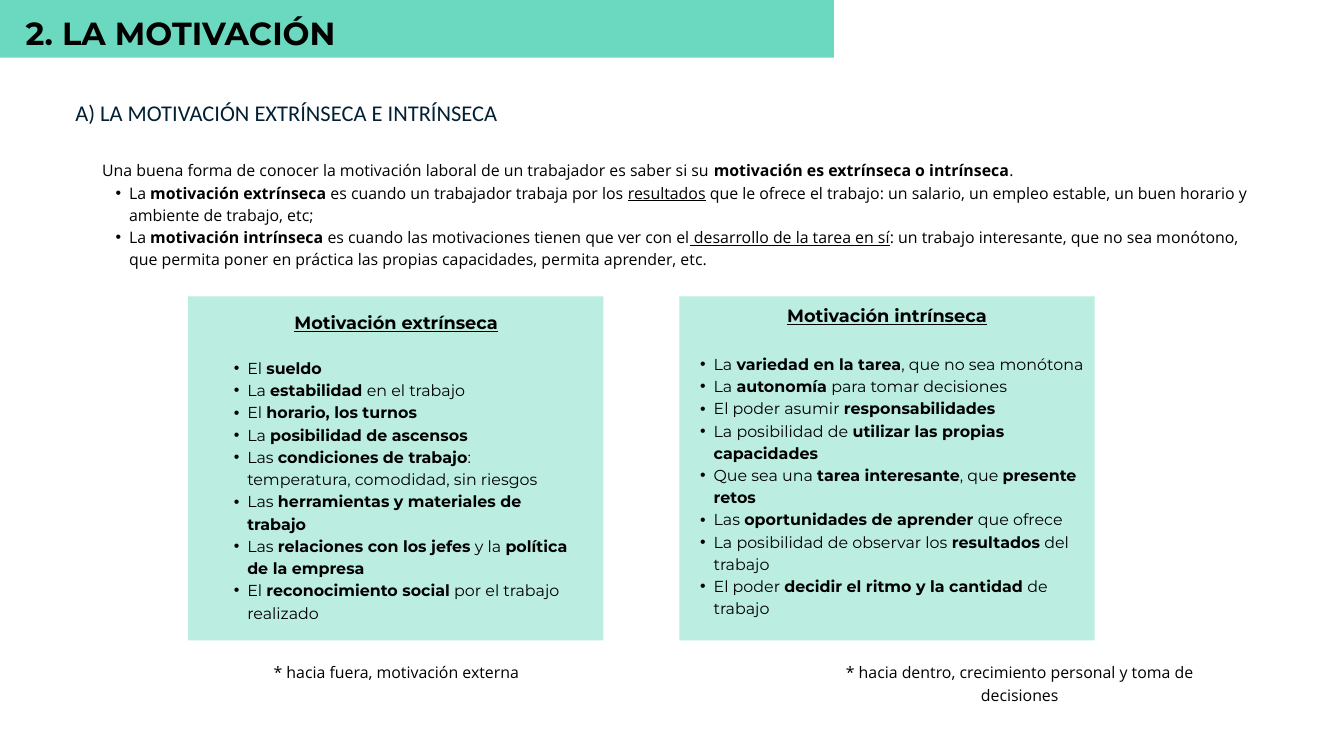
from lxml import etree
from pptx import Presentation, util as u
from pptx.dml import color
from pptx.enum import shapes, text
from pptx.oxml import ns

COLOURS = {"mint": "6BD9BF", "ink": "000000", "navy": "022033"}
FORMATS = {
    "title": {"name": "Montserrat", "size": u.Pt(34.2), "bold": True},
    "section": {"name": "Calibri", "size": u.Pt(24.1)},
    "body": {"name": "Open Sans", "size": u.Pt(17)},
    "heading": {"name": "Montserrat", "size": u.Pt(19), "bold": True, "underline": True},
    "item": {"name": "Montserrat", "size": u.Pt(17)},
}
LINE_SPACING = {"title": 48, "section": 22.2, "body": 23.8, "heading": 26.6, "item": 23.8}
CENTER = text.PP_ALIGN.CENTER


class SlideBuilder:
    def __init__(self, slide):
        self.slide = slide

    def band(self, left, top, width, height, opacity=None):
        """Borderless mint rectangle, optionally see-through."""
        band = self.slide.shapes.add_shape(
            shapes.MSO_SHAPE.RECTANGLE, *map(u.Inches, (left, top, width, height)))
        band.shadow.inherit = False
        band.line.fill.background()
        band.fill.solid()
        band.fill.fore_color.rgb = color.RGBColor.from_string(COLOURS["mint"])
        if opacity:
            mint = band.fill._xPr.find(".//" + ns.qn("a:srgbClr"))
            etree.SubElement(mint, ns.qn("a:alpha"), val=str(opacity * 1000))

    def text_box(self, left, top, width, height):
        box = self.slide.shapes.add_textbox(*map(u.Inches, (left, top, width, height)))
        frame = box.text_frame
        settings = {"margin_left": 0, "margin_top": 0, "margin_right": 0, "margin_bottom": 0,
                    "word_wrap": True, "auto_size": text.MSO_AUTO_SIZE.SHAPE_TO_FIT_TEXT}
        for key, value in settings.items():
            setattr(frame, key, value)
        return frame

    def paragraph(self, frame, words, style, ink="ink", align=None, bullet=False, after=None):
        """Add a paragraph; ** marks bold and _ marks underlined words."""
        first = frame.paragraphs[0]
        line = frame.add_paragraph() if first.runs else first
        if bullet:
            self.bullet(line)
        layout = {"line_spacing": u.Pt(LINE_SPACING[style]), "alignment": align}
        if after:
            layout["space_after"] = u.Pt(after)
        for key, value in layout.items():
            setattr(line, key, value)
        for i, stretch in enumerate(words.split("**")):
            for j, piece in enumerate(stretch.split("_")):
                if not piece:
                    continue
                run = line.add_run()
                run.text = piece
                marks = {"bold": i % 2 == 1, "underline": j % 2 == 1}
                for key, value in {**marks, **FORMATS[style]}.items():
                    setattr(run.font, key, value)
                run.font.color.rgb = color.RGBColor.from_string(COLOURS[ink])

    def bullet(self, line):
        line.level = 1
        properties = line._p.get_or_add_pPr()
        properties.set("marL", str(u.Inches(0.4)))
        properties.set("indent", str(u.Inches(-0.2)))
        etree.SubElement(properties, ns.qn("a:buFont"), typeface="Arial")
        etree.SubElement(properties, ns.qn("a:buChar"), char="•")

    def label(self, place, words, style, **options):
        self.paragraph(self.text_box(*place), words, style, **options)

    def bullets(self, frame, items, style):
        for item in items:
            self.paragraph(frame, item, style, bullet=True)


INTRO = ("Una buena forma de conocer la motivación laboral de un trabajador es saber si su "
         "**motivación es extrínseca o intrínseca**.")
DEFINITIONS = [
    "La **motivación extrínseca** es cuando un trabajador trabaja por los _resultados_ que le "
    "ofrece el trabajo: un salario, un empleo estable, un buen horario y ambiente de trabajo, etc;",
    "La **motivación intrínseca** es cuando las motivaciones tienen que ver con el_ desarrollo de "
    "la tarea en sí_: un trabajo interesante, que no sea monótono, que permita poner en práctica "
    "las propias capacidades, permita aprender, etc.",
]
PANELS = [
    {
        "left": 2.8, "place": (3.28, 4.59, 5.23, 4.88), "gap": 23.8,
        "heading": "Motivación extrínseca",
        "items": [
            "El **sueldo**",
            "La **estabilidad** en el trabajo",
            "El **horario, los turnos**",
            "La **posibilidad de ascensos**",
            "Las **condiciones de trabajo**: temperatura, comodidad, sin riesgos",
            "Las **herramientas y materiales de trabajo**",
            "Las **relaciones con los jefes** y la **política de la empresa**",
            "El **reconocimiento social** por el trabajo realizado",
        ],
        "note": "* hacia fuera, motivación externa", "note_place": (4.07, 9.82, 3.66, 0.31),
    },
    {
        "left": 10.11, "place": (10.22, 4.49, 5.96, 4.6), "gap": 26.6,
        "heading": "Motivación intrínseca",
        "items": [
            "La **variedad en la tarea**, que no sea monótona",
            "La **autonomía** para tomar decisiones",
            "El poder asumir **responsabilidades**",
            "La posibilidad de **utilizar las propias capacidades**",
            "Que sea una **tarea interesante**, que **presente retos**",
            "Las **oportunidades de aprender** que ofrece",
            "La posibilidad de observar los **resultados** del trabajo",
            "El poder **decidir el ritmo y la cantidad** de trabajo",
        ],
        "note": "* hacia dentro, crecimiento personal y toma de decisiones",
        "note_place": (11.98, 9.82, 6.39, 0.31),
    },
]


def main():
    deck = Presentation()
    deck.slide_width, deck.slide_height = u.Inches(20), u.Inches(11.25)
    builder = SlideBuilder(deck.slides.add_slide(deck.slide_layouts[6]))

    # Title banner and section name
    builder.band(0, 0, 12.41, 0.86)
    builder.label((0.38, 0.11, 9.62, 0.63), "2. LA MOTIVACIÓN", "title")
    builder.label((1.12, 1.56, 7.12, 0.33), "A) LA MOTIVACIÓN EXTRÍNSECA E INTRÍNSECA",
                  "section", ink="navy")

    # Introduction with the two definitions
    intro = builder.text_box(1.52, 2.35, 17.18, 1.6)
    builder.paragraph(intro, INTRO, "body")
    builder.bullets(intro, DEFINITIONS, "body")

    # One panel and one note per kind of motivation
    for panel in PANELS:
        builder.band(panel["left"], 4.41, 6.18, 5.12, opacity=46)
        factors = builder.text_box(*panel["place"])
        builder.paragraph(factors, panel["heading"], "heading", align=CENTER, after=panel["gap"])
        builder.bullets(factors, panel["items"], "item")
        builder.label(panel["note_place"], panel["note"], "body", align=CENTER)

    deck.save("out.pptx")


if __name__ == "__main__":
    main()
